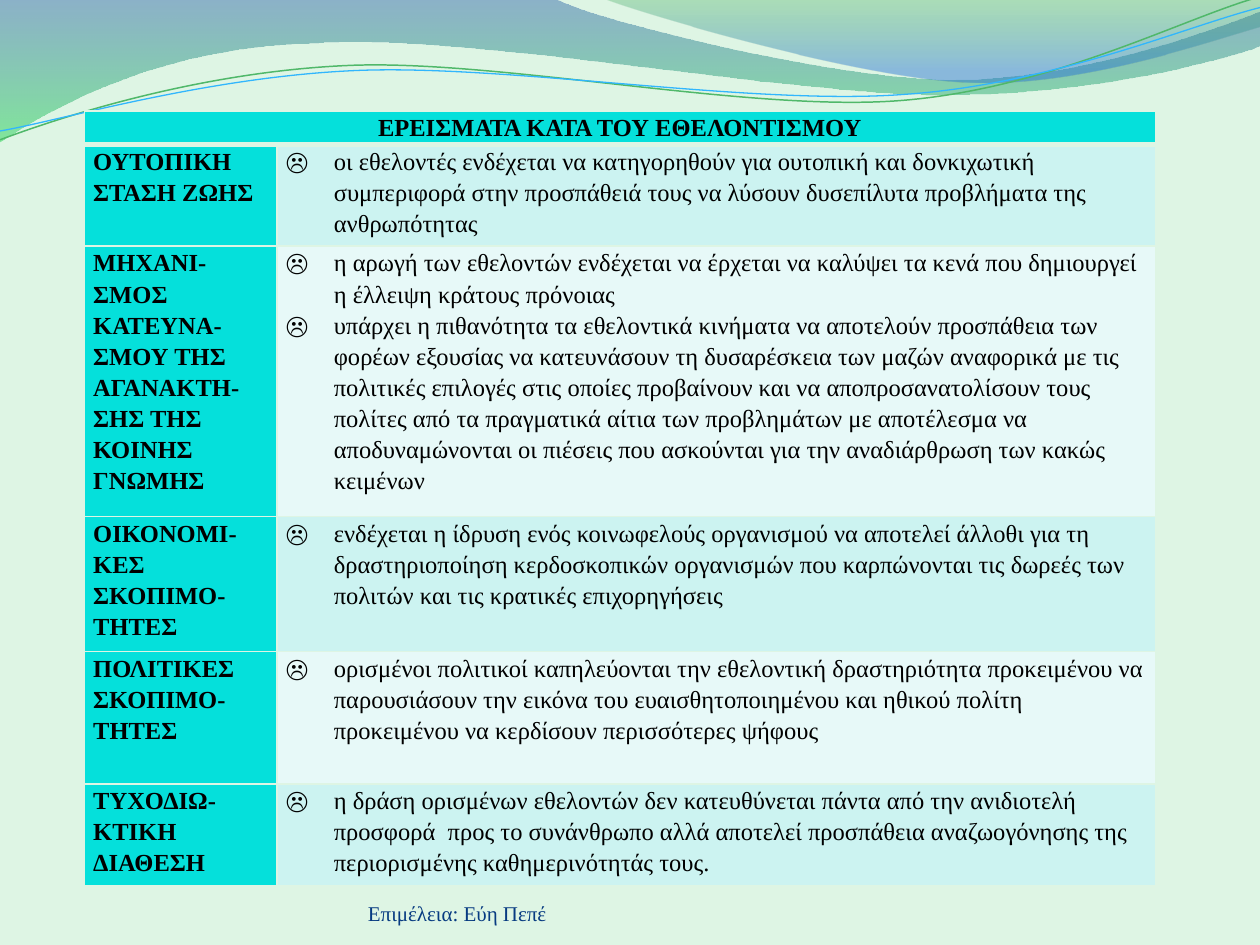
from lxml.etree import SubElement
from pptx import Presentation
from pptx.dml.color import RGBColor
from pptx.enum.text import MSO_ANCHOR, PP_ALIGN
from pptx.oxml import parse_xml
from pptx.oxml.ns import nsdecls, qn
from pptx.util import Inches, Pt

FONT = "Times New Roman"
COLORS = {
    "page": "DEF5E4", "head": "05E0DB", "odd": "CCF3F1", "even": "E7F9F8",
    "text": "000000", "footer": "073B81", "blue": "2960A7", "green": "35DA5E",
    "leaf": "36A752", "sky": "2472D3", "green line": "50B86A", "blue line": "31B6FD",
}
RGB = {name: RGBColor.from_string(value) for name, value in COLORS.items()}

deck = Presentation()
deck.slide_width, deck.slide_height = Inches(10), Inches(7.5)
page = deck.slides.add_slide(deck.slide_layouts[6])
page.background.fill.solid()
page.background.fill.fore_color.rgb = RGB["page"]


def add_wave(segments, closed):
    """Draw straight (2 numbers) and cubic (6 numbers) segments as one outline."""
    points = [(Inches(s[i]), Inches(s[i + 1])) for s in segments for i in range(0, len(s), 2)]
    builder = page.shapes.build_freeform(*points[0])
    builder.add_line_segments(points[1:], close=closed)
    wave = builder.convert_to_shape()
    wave.shadow.inherit = False
    # Join each three points of a cubic segment into one curve
    lines = wave._element.spPr.findall(".//" + qn("a:lnTo"))
    for segment in segments[1:]:
        first = lines.pop(0)
        if len(segment) == 6:
            first.tag = qn("a:cubicBezTo")
            for _ in range(2):
                extra = lines.pop(0)
                first.append(extra[0])
                extra.getparent().remove(extra)
    return wave


def add_text(para, text, size, color, bold=False):
    span = para.add_run()
    span.text = text
    span.font.name, span.font.size, span.font.bold = FONT, Pt(size), bold
    span.font.color.rgb = RGB[color]


# Translucent waves: outline, then (position, colour, opacity) from top to bottom
filled_waves = [
    ([(0, 0), (4.4, -0.01), (4.76, 0.17, 6.64, 0.63, 7.58, 0.63),
      (8.53, 0.63, 9.58, 0.26, 10, 0.09), (10.01, 0.36),
      (9.83, 0.44, 8.7, 0.76, 7.46, 0.75), (6.22, 0.75, 3.82, 0.28, 2.57, 0.34),
      (1.29, 0.36, 0.46, 0.83, -0.01, 1.13)],
     [(0, "blue", 45), (1, "green", 55)]),
    ([(4.79, -0.01), (5.09, 0.11, 6.82, 0.62, 7.69, 0.65),
      (8.56, 0.69, 9.61, 0.32, 10, 0.21), (10, 0)],
     [(0, "leaf", 30), (0.8, "sky", 45)]),
]
for outline, stops in filled_waves:
    wave = add_wave(outline, True)
    wave.line.fill.background()
    wave.fill.gradient()
    wave.fill.gradient_angle = 270
    for stop, (position, color, opacity) in zip(wave.fill.gradient_stops, stops):
        stop.position = position
        stop.color.rgb = RGB[color]
    for element, (_, _, opacity) in zip(wave._element.spPr.iter(qn("a:srgbClr")), stops):
        SubElement(element, qn("a:alpha"), val=str(opacity * 1000))

# Thin wave lines
line_waves = [
    ([(0, 1.11), (0.48, 0.93, 1.58, 0.57, 2.77, 0.52),
      (3.95, 0.47, 5.93, 0.89, 7.13, 0.8), (8.33, 0.71, 9.38, 0.15, 9.98, -0.02)],
     "green line", 0.85),
    ([(0, 1.04), (0.47, 0.96, 1.64, 0.61, 2.83, 0.56),
      (4.03, 0.51, 5.97, 0.84, 7.17, 0.75), (8.36, 0.67, 9.41, 0.21, 10, 0.06)],
     "blue line", 0.75),
]
for outline, color, width in line_waves:
    wave = add_wave(outline, False)
    wave.fill.background()
    wave.line.color.rgb = RGB[color]
    wave.line.width = Pt(width)

# Footer
box = page.shapes.add_textbox(Inches(2.92), Inches(6.95), Inches(3.67), Inches(0.4))
frame = box.text_frame
frame.word_wrap = True
frame.vertical_anchor = MSO_ANCHOR.BOTTOM
frame.margin_left = frame.margin_right = frame.margin_top = frame.margin_bottom = 0
add_text(frame.paragraphs[0], "Επιμέλεια: Εύη Πεπέ", 12, "footer")

# Table content: heading, then the arguments beside it
heading = "ΕΡΕΙΣΜΑΤΑ ΚΑΤΑ ΤΟΥ ΕΘΕΛΟΝΤΙΣΜΟΥ"
arguments = [
    ("ΟΥΤΟΠΙΚΗ ΣΤΑΣΗ ΖΩΗΣ",
     ["οι εθελοντές ενδέχεται να κατηγορηθούν για ουτοπική και δονκιχωτική συμπεριφορά "
      "στην προσπάθειά τους να λύσουν δυσεπίλυτα προβλήματα της ανθρωπότητας"]),
    ("ΜΗΧΑΝΙ-ΣΜΟΣ ΚΑΤΕΥΝΑ-ΣΜΟΥ ΤΗΣ ΑΓΑΝΑΚΤΗ-ΣΗΣ ΤΗΣ ΚΟΙΝΗΣ ΓΝΩΜΗΣ",
     ["η αρωγή των εθελοντών ενδέχεται να έρχεται να καλύψει τα κενά που δημιουργεί "
      "η έλλειψη κράτους πρόνοιας",
      "υπάρχει η πιθανότητα τα εθελοντικά κινήματα να αποτελούν προσπάθεια των φορέων "
      "εξουσίας να κατευνάσουν τη δυσαρέσκεια των μαζών αναφορικά με τις πολιτικές "
      "επιλογές στις οποίες προβαίνουν και να αποπροσανατολίσουν τους πολίτες από τα "
      "πραγματικά αίτια των προβλημάτων με αποτέλεσμα να αποδυναμώνονται οι πιέσεις που "
      "ασκούνται για την αναδιάρθρωση των κακώς κειμένων"]),
    ("ΟΙΚΟΝΟΜΙ-ΚΕΣ ΣΚΟΠΙΜΟ-ΤΗΤΕΣ",
     ["ενδέχεται η ίδρυση ενός κοινωφελούς οργανισμού να αποτελεί άλλοθι για τη "
      "δραστηριοποίηση κερδοσκοπικών οργανισμών που καρπώνονται τις δωρεές των πολιτών "
      "και τις κρατικές επιχορηγήσεις"]),
    ("ΠΟΛΙΤΙΚΕΣ ΣΚΟΠΙΜΟ-ΤΗΤΕΣ",
     ["ορισμένοι πολιτικοί καπηλεύονται την εθελοντική δραστηριότητα προκειμένου να "
      "παρουσιάσουν την εικόνα του ευαισθητοποιημένου και ηθικού πολίτη προκειμένου να "
      "κερδίσουν περισσότερες ψήφους"]),
    ("ΤΥΧΟΔΙΩ-ΚΤΙΚΗ ΔΙΑΘΕΣΗ",
     ["η δράση ορισμένων εθελοντών δεν κατευθύνεται πάντα από την ανιδιοτελή προσφορά  "
      "προς το συνάνθρωπο αλλά αποτελεί προσπάθεια αναζωογόνησης της περιορισμένης "
      "καθημερινότητάς τους."]),
]

# Table grid
column_widths = [1.53, 6.97]
row_heights = [0.25, 0.78, 2.12, 1.05, 1.05, 0.6]
holder = page.shapes.add_table(len(row_heights), len(column_widths), Inches(0.67), Inches(0.88),
                               Inches(sum(column_widths)), Inches(6.07))
table = holder.table
for column, width in zip(table.columns, column_widths):
    column.width = Inches(width)
for row, height in zip(table.rows, row_heights):
    row.height = Inches(height)
holder.height = Inches(6.07)
table.cell(0, 0).merge(table.cell(0, 1))
# Keep the merged-away cell from stretching the heading row
SubElement(table.cell(0, 1).text_frame.paragraphs[0]._p, qn("a:endParaRPr"), sz="1000")

# Table cells
rows = [(heading, [])] + arguments
for row_index, (label, points) in enumerate(rows):
    for column_index, texts in enumerate(([label], points)):
        cell = table.cell(row_index, column_index)
        cell.margin_left = cell.margin_right = Inches(0.07)
        cell.margin_top = cell.margin_bottom = 0
        is_head = row_index == 0 or column_index == 0
        cell.fill.solid()
        cell.fill.fore_color.rgb = RGB["head" if is_head else "odd" if row_index % 2 else "even"]
        for index, side in enumerate("LRTB"):
            width = Pt(3 if row_index == 0 and side == "B" else 1)
            cell._tc.get_or_add_tcPr().insert(index, parse_xml(
                f'<a:ln{side} {nsdecls("a")} w="{width}"><a:solidFill>'
                f'<a:srgbClr val="{COLORS["page"]}"/></a:solidFill></a:ln{side}>'))
        for index, text in enumerate(texts):
            frame = cell.text_frame
            para = frame.add_paragraph() if index else frame.paragraphs[0]
            para.line_spacing = 1.15
            para.alignment = PP_ALIGN.CENTER if row_index == 0 else PP_ALIGN.LEFT
            if not is_head:
                properties = para._p.get_or_add_pPr()
                properties.set("marL", str(Inches(0.38)))
                properties.set("indent", str(-Inches(0.38)))
                SubElement(properties, qn("a:buFont"), typeface=FONT)
                SubElement(properties, qn("a:buChar"), char="☹")
            add_text(para, text, 14, "text", bold=is_head)

deck.save("out.pptx")
